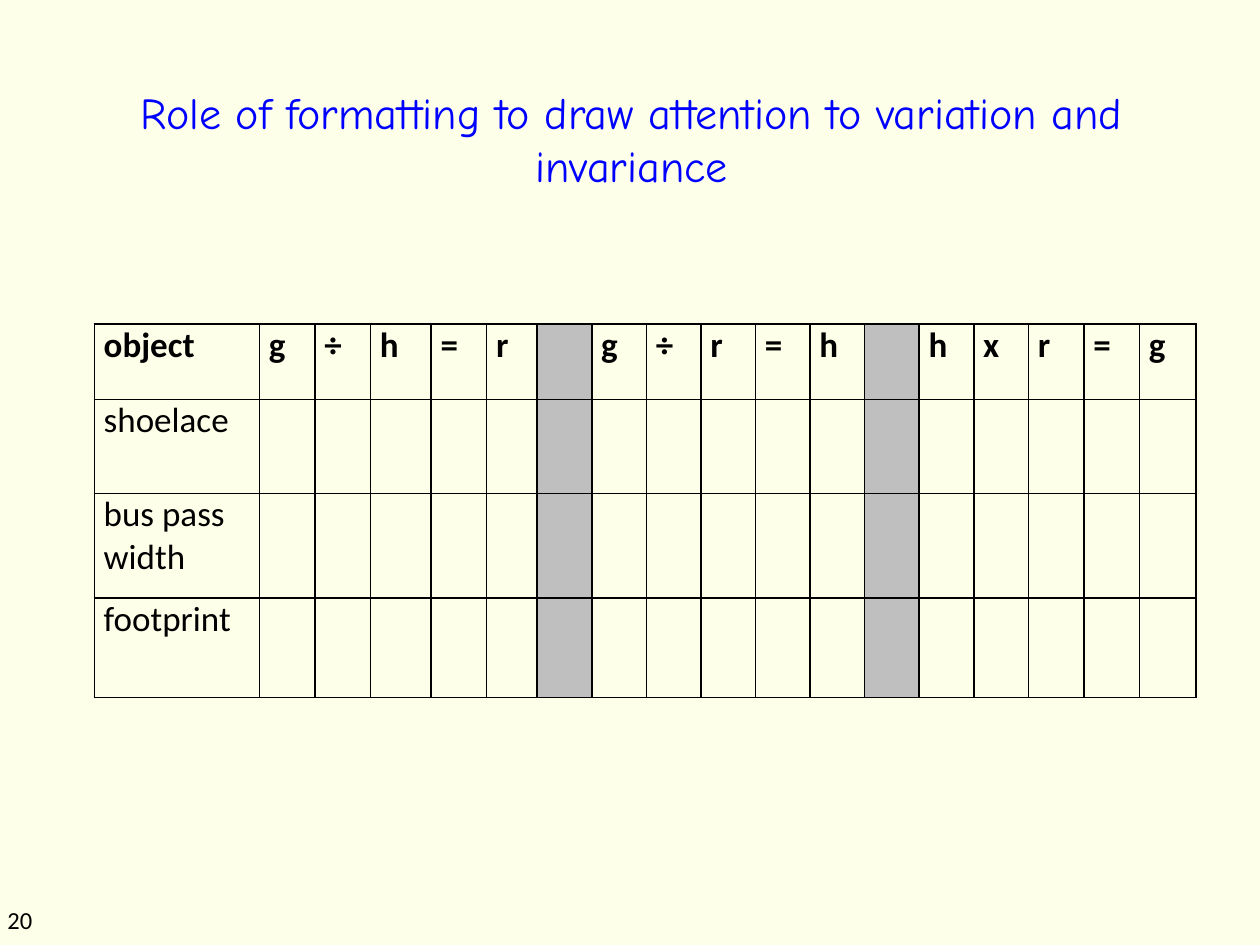
import dataclasses

import pptx
import pptx.dml.color
import pptx.enum.text
import pptx.oxml
import pptx.oxml.ns
import pptx.util
from pptx.util import Cm


@dataclasses.dataclass(frozen=True)
class Theme:
    paper: str = "FEFFE9"
    ink: str = "000000"
    blue: str = "0000FF"
    grey: str = "BFBFBF"
    head: str = "Comic Neue"
    body: str = "Calibri"
    big: float = 25.2
    mid: float = 20
    small: float = 14
    rule: float = 1


def tint(code):
    return pptx.dml.color.RGBColor.from_string(code)


class Deck:
    def __init__(self, theme):
        self.theme = theme
        self.show = pptx.Presentation()
        self.show.slide_width = Cm(25.4)
        self.show.slide_height = Cm(19.05)
        self.slide = None

    def page(self):
        self.slide = self.show.slides.add_slide(self.show.slide_layouts[5])
        fill = self.slide.background.fill
        fill.solid()
        fill.fore_color.rgb = tint(self.theme.paper)

    def add_text(self, para, text, size, face=None, color=None, bold=False):
        run = para.add_run()
        run.text = text
        font = run.font
        font.size = pptx.util.Pt(size)
        font.name = face or self.theme.body
        font.bold = bold
        font.color.rgb = tint(color or self.theme.ink)

    def title(self, text, left, top, width, height, foot):
        shape = self.slide.shapes.title
        shape.left, shape.top = Cm(left), Cm(top)
        shape.width, shape.height = Cm(width), Cm(height)
        frame = shape.text_frame
        frame.word_wrap = True
        frame.auto_size = pptx.enum.text.MSO_AUTO_SIZE.NONE
        frame.vertical_anchor = pptx.enum.text.MSO_ANCHOR.MIDDLE
        frame.margin_bottom = Cm(foot)
        para = frame.paragraphs[0]
        para.alignment = pptx.enum.text.PP_ALIGN.CENTER
        self.add_text(para, text, self.theme.big, self.theme.head, self.theme.blue)

    def label(self, text, left, top, width, height):
        box = self.slide.shapes.add_textbox(Cm(left), Cm(top), Cm(width), Cm(height))
        box.text_frame.word_wrap = True
        self.add_text(box.text_frame.paragraphs[0], text, self.theme.small)

    def border(self, cell):
        props = cell._tc.get_or_add_tcPr()
        space = pptx.oxml.ns.nsdecls("a")
        width = pptx.util.Pt(self.theme.rule)
        for side in "LRTB":
            props.append(pptx.oxml.parse_xml(
                f'<a:ln{side} {space} w="{width}"><a:solidFill>'
                f'<a:srgbClr val="{self.theme.ink}"/></a:solidFill></a:ln{side}>'))

    def grid(self, rows, left, top, widths, heights, gaps):
        shape = self.slide.shapes.add_table(
            len(heights), len(widths), Cm(left), Cm(top),
            Cm(sum(widths)), Cm(sum(heights)))
        table = shape.table
        table.first_row = table.horz_banding = False
        for col, width in zip(table.columns, widths):
            col.width = Cm(width)
        for row, height in zip(table.rows, heights):
            row.height = Cm(height)
        for r, row in enumerate(table.rows):
            for c, cell in enumerate(row.cells):
                cell.margin_left = cell.margin_right = Cm(0.19)
                cell.margin_top = cell.margin_bottom = 0
                self.border(cell)
                if c in gaps:
                    cell.fill.solid()
                    cell.fill.fore_color.rgb = tint(self.theme.grey)
                else:
                    cell.fill.background()
                if c < len(rows[r]) and rows[r][c].strip():
                    self.add_text(cell.text_frame.paragraphs[0], rows[r][c],
                                  self.theme.mid, bold=r == 0)

    def save(self):
        self.show.save("out.pptx")


def main():
    deck = Deck(Theme())
    deck.page()
    deck.title("Role of formatting to draw attention to variation and invariance",
               1.3, 1.73, 22.86, 3.18, 1.2)
    rows = [["object", *"g÷h=r g÷r=h hxr=g"],
            ["shoelace"], ["bus pass width"], ["footprint"]]
    widths = [3.33, 1.12, 1.12, 1.22, 1.12, 1.02, *[1.1] * 9, 1.12, 1.12, 1.14]
    deck.grid(rows, 1.9, 6.53, widths, [1.52, 1.9, 2.1, 2.01], (6, 12))
    deck.label("20", -0.1, 18.11, 1.6, 1.02)
    deck.save()


if __name__ == "__main__":
    main()
